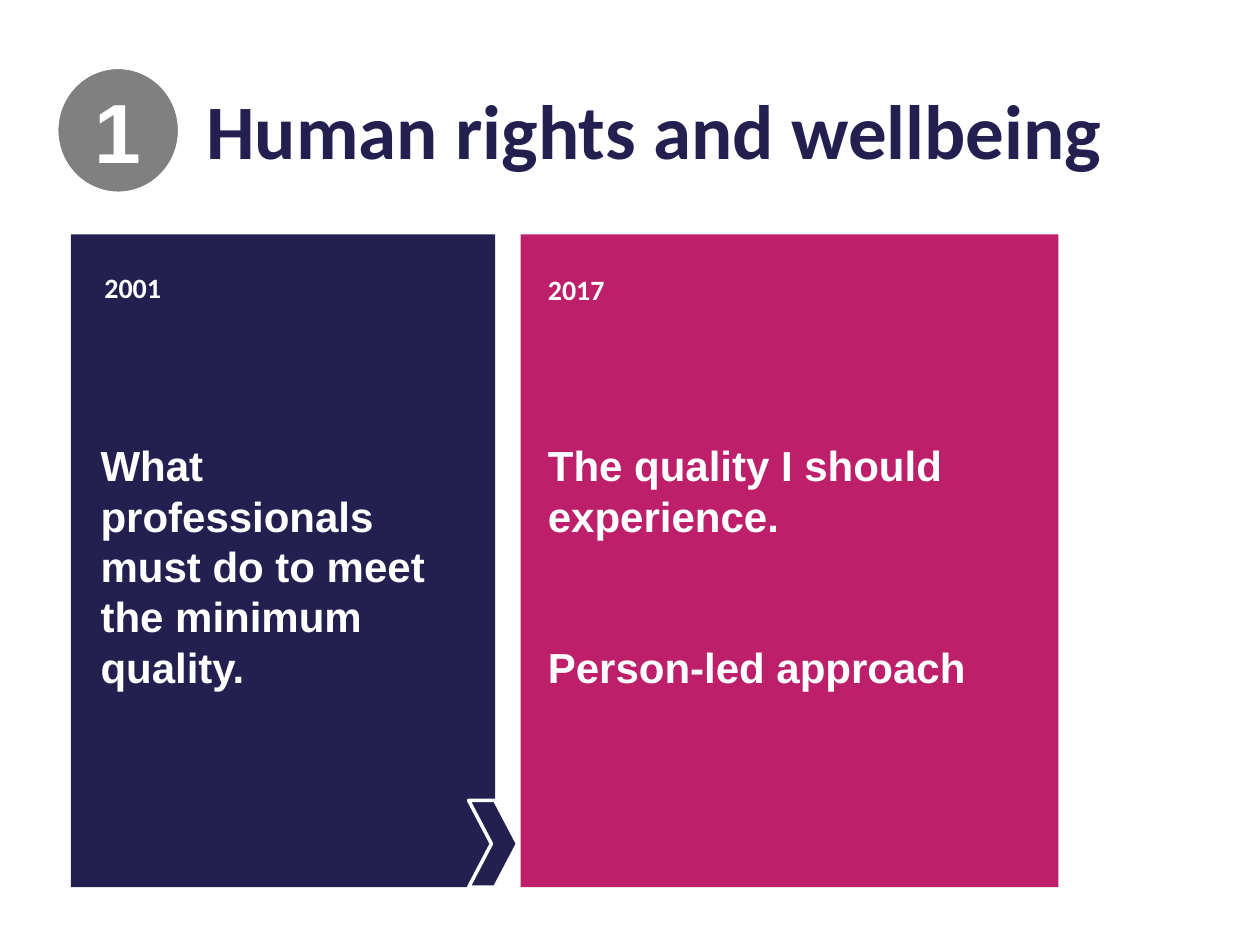
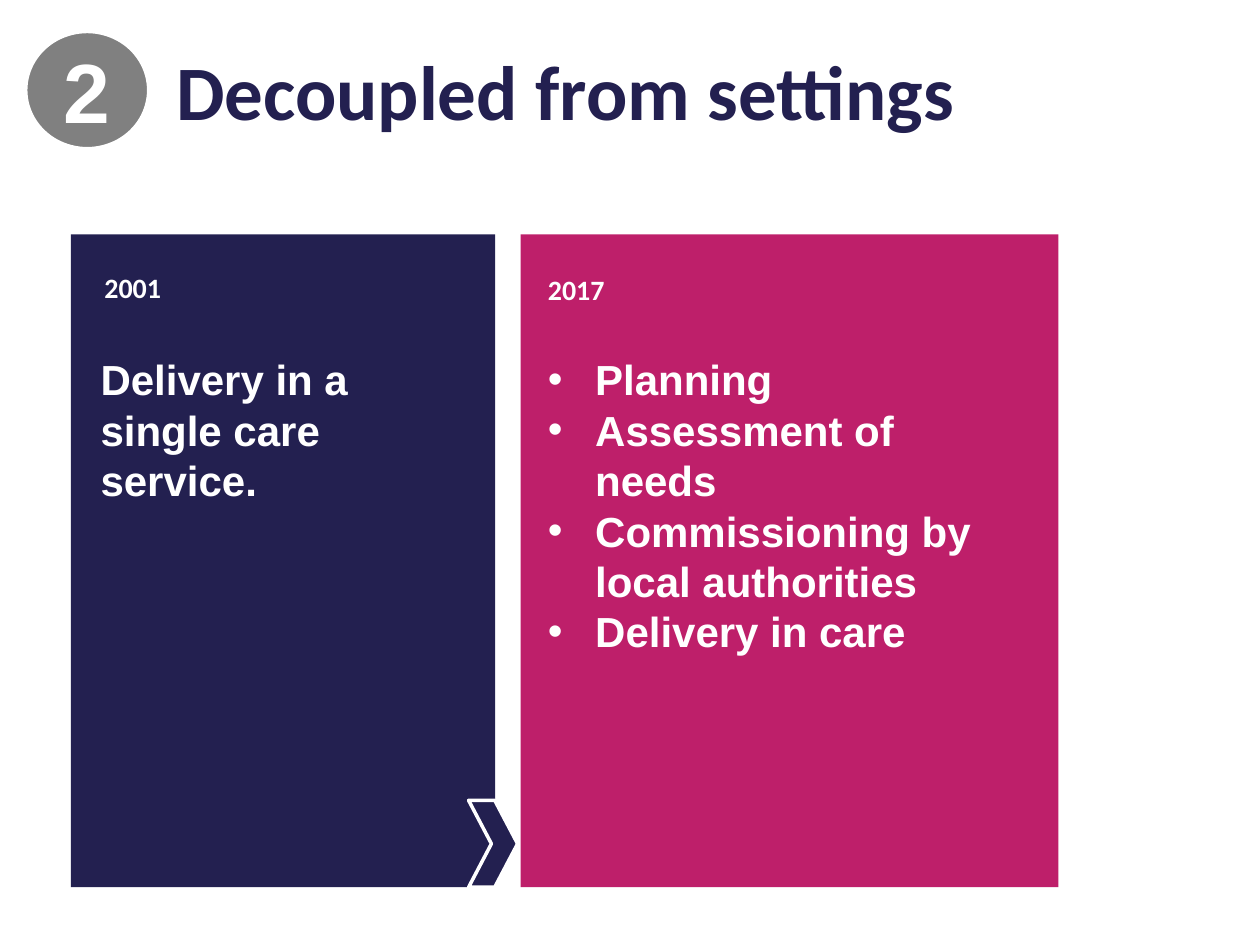
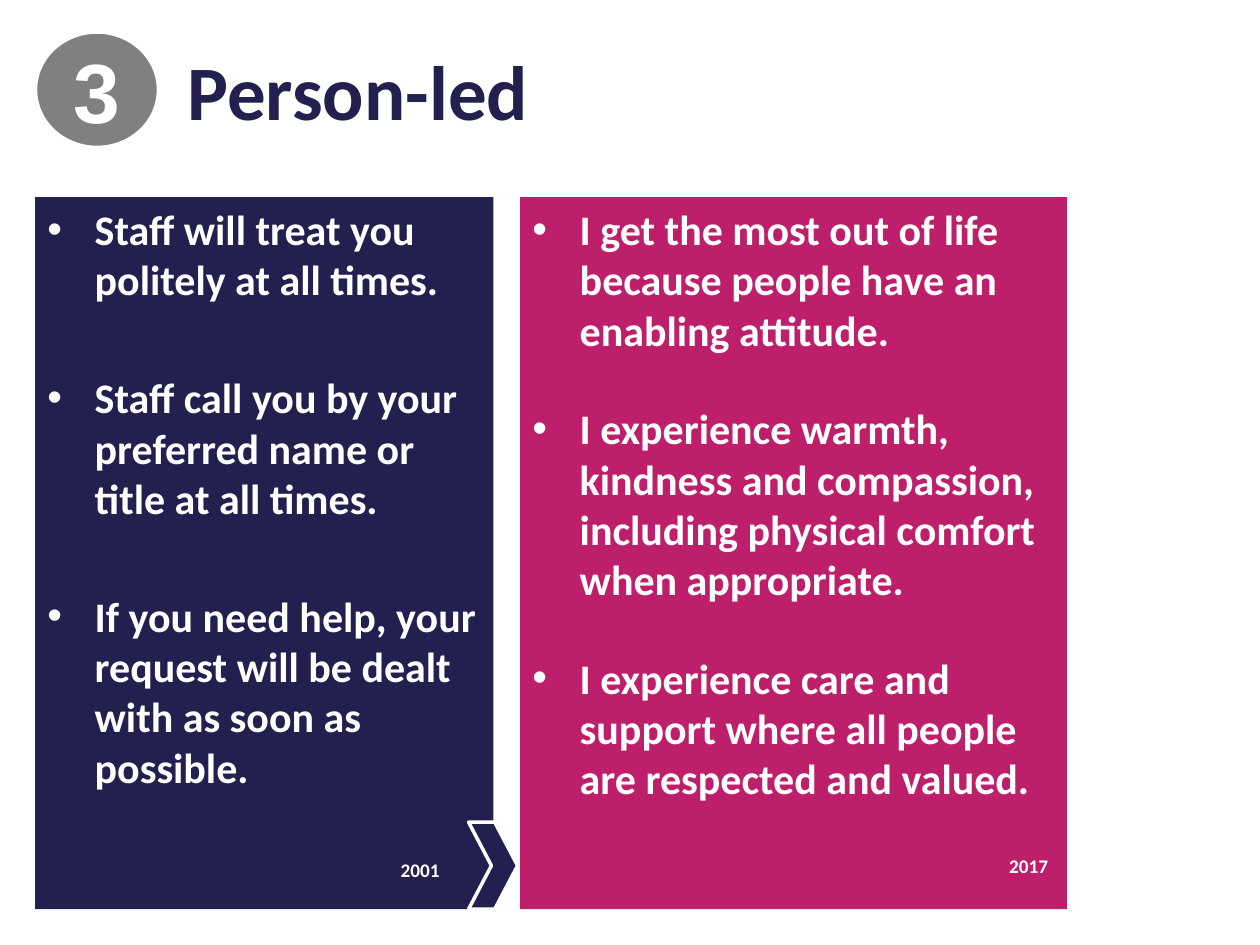
from dataclasses import dataclass

from lxml.etree import SubElement
from pptx import Presentation
from pptx.dml.color import RGBColor
from pptx.enum.shapes import MSO_SHAPE as Preset
from pptx.enum.text import MSO_ANCHOR as Anchor, MSO_AUTO_SIZE as AutoSize, PP_ALIGN as Align
from pptx.oxml.ns import qn
from pptx.util import Pt

NAVY = RGBColor(0x23, 0x20, 0x50)
MAGENTA = RGBColor(0xBE, 0x1F, 0x6A)
GREY = RGBColor(0x80, 0x80, 0x80)
WHITE = RGBColor(0xFF, 0xFF, 0xFF)

HEADING = {"name": "Calibri", "size": Pt(44), "bold": True}
BADGE = {"name": "Arial", "size": Pt(48), "bold": True}
BODY = {"name": "Arial", "size": Pt(24), "bold": True}
BODY_CALIBRI = BODY | {"name": "Calibri"}
YEAR = {"name": "Calibri", "size": Pt(16), "bold": True}
YEAR_SMALL = YEAR | {"size": Pt(11)}

BODY_LEADING = Pt(28.8)
BULLET_INDENT = Pt(27)
CHEVRON_LEFT, CHEVRON_WIDTH, CHEVRON_HEIGHT = 267.8, 28, 49.7


@dataclass(frozen=True)
class Box:
    left: float
    top: float
    width: float
    height: float

    def lengths(self) -> list:
        return [Pt(v) for v in (self.left, self.top, self.width, self.height)]


@dataclass(frozen=True)
class Era:
    """One year's panel; without a body box the text sits in the panel."""
    year: str
    color: RGBColor
    panel: Box
    year_at: tuple[float, float]
    lines: list[str]
    body: Box | None = None
    bulleted: bool = False
    gap: float = 0


@dataclass(frozen=True)
class Theme:
    number: str
    title: str
    badge: Box
    title_box: Box
    eras: tuple[Era, Era]
    year_style: dict


def write(frame, lines: list[str], style: dict, color: RGBColor, anchor=Anchor.TOP,
          align=Align.LEFT, leading=None, bulleted: bool = False, gap: float = 0) -> None:
    frame.word_wrap = True
    frame.vertical_anchor = anchor
    for index, line in enumerate(lines):
        paragraph = frame.paragraphs[0] if index == 0 else frame.add_paragraph()
        paragraph.alignment = align
        if leading:
            paragraph.line_spacing = leading
        if index and gap:
            paragraph.space_before = Pt(gap)
        if bulleted:
            properties = paragraph._p.get_or_add_pPr()
            properties.set("marL", str(BULLET_INDENT))
            properties.set("indent", str(-BULLET_INDENT))
            SubElement(properties, qn("a:buFont"), typeface="Arial")
            SubElement(properties, qn("a:buChar"), char="•")
        run = paragraph.add_run()
        run.text = line
        for attribute, value in style.items():
            setattr(run.font, attribute, value)
        run.font.color.rgb = color


def add_block(slide, preset, box: Box, fill: RGBColor, outlined: bool = False):
    block = slide.shapes.add_shape(preset, *box.lengths())
    block.shadow.inherit = False
    block.fill.solid()
    block.fill.fore_color.rgb = fill
    if outlined:
        block.line.color.rgb = WHITE
        block.line.width = Pt(2)
    else:
        block.line.fill.background()
    return block


def add_text(slide, box: Box, lines: list[str], style: dict, color: RGBColor, **options):
    holder = slide.shapes.add_textbox(*box.lengths())
    write(holder.text_frame, lines, style, color, **options)
    return holder


def add_era(slide, era: Era) -> None:
    panel = add_block(slide, Preset.RECTANGLE, era.panel, era.color)
    options = {"leading": BODY_LEADING, "bulleted": era.bulleted, "gap": era.gap}
    if era.body:
        body = add_text(slide, era.body, era.lines, BODY, WHITE, **options)
        body.text_frame.auto_size = AutoSize.SHAPE_TO_FIT_TEXT
    else:
        write(panel.text_frame, era.lines, BODY_CALIBRI, WHITE, **options)


def add_theme(deck, theme: Theme) -> None:
    slide = deck.slides.add_slide(deck.slide_layouts[6])
    # Numbered heading
    add_text(slide, theme.title_box, [theme.title], HEADING, NAVY, anchor=Anchor.MIDDLE)
    badge = add_block(slide, Preset.OVAL, theme.badge, GREY, outlined=True)
    write(badge.text_frame, [theme.number], BADGE, WHITE, Anchor.MIDDLE, Align.CENTER)
    # Panels and the chevron between them
    for era in theme.eras:
        add_era(slide, era)
    before = theme.eras[0].panel
    chevron_top = before.top + before.height - CHEVRON_HEIGHT
    chevron = add_block(slide, Preset.CHEVRON, Box(CHEVRON_LEFT, chevron_top, CHEVRON_WIDTH,
                                                   CHEVRON_HEIGHT), NAVY, outlined=True)
    chevron.adjustments[0] = 0.466
    # Year labels
    for era in theme.eras:
        add_text(slide, Box(*era.year_at, 51.8, 36), [era.year], theme.year_style, WHITE,
                 anchor=Anchor.MIDDLE)


def before_era(lines: list[str], body: Box) -> Era:
    return Era("2001", NAVY, Box(40.5, 134, 242.5, 373), (52.6, 146.2), lines, body)


def after_era(lines: list[str], body: Box, **options) -> Era:
    return Era("2017", MAGENTA, Box(297.5, 134, 307.3, 373), (306, 147.6), lines, body, **options)


THEMES = [
    Theme("1", "Human rights and wellbeing",
          Box(32.4, 38.5, 70.3, 72), Box(110.9, 13.7, 656.6, 120.2),
          (before_era(["What professionals must do to meet the minimum quality."],
                      Box(50.4, 247.7, 218.2, 152.6)),
           after_era(["The quality I should experience.", "Person-led approach"],
                     Box(306, 247.7, 255.6, 211), gap=57.6)),
          YEAR),
    Theme("2", "Decoupled from settings",
          Box(14.7, 18, 70.3, 67), Box(93.6, -8.6, 643, 120.2),
          (before_era(["Delivery in a single care service."], Box(50.4, 198.7, 218.2, 94.3)),
           after_era(["Planning", "Assessment of needs", "Commissioning by local authorities",
                      "Delivery in care"],
                     Box(306, 198.7, 286.6, 269.3), bulleted=True)),
          YEAR),
    Theme("3", "Person-led",
          Box(20.3, 18.3, 70.3, 66), Box(100, -8.6, 653.8, 120.2),
          (Era("2001", NAVY, Box(20, 112.7, 262, 406.8), (221.8, 478.8),
               ["Staff will treat you politely at all times.",
                "Staff call you by your preferred name or title at all times.",
                "If you need help, your request will be dealt with as soon as possible."],
               bulleted=True, gap=38.5),
           Era("2017", MAGENTA, Box(297.2, 112.7, 312.5, 406.8), (569.5, 476.6),
               ["I get the most out of life because people have an enabling attitude.",
                "I experience warmth, kindness and compassion, including physical comfort "
                "when appropriate.",
                "I experience care and support where all people are respected and valued."],
               bulleted=True, gap=27.4)),
          YEAR_SMALL),
]


def main() -> None:
    deck = Presentation()
    deck.slide_width, deck.slide_height = Pt(720), Pt(540)
    for theme in THEMES:
        add_theme(deck, theme)
    deck.save("out.pptx")


if __name__ == "__main__":
    main()
